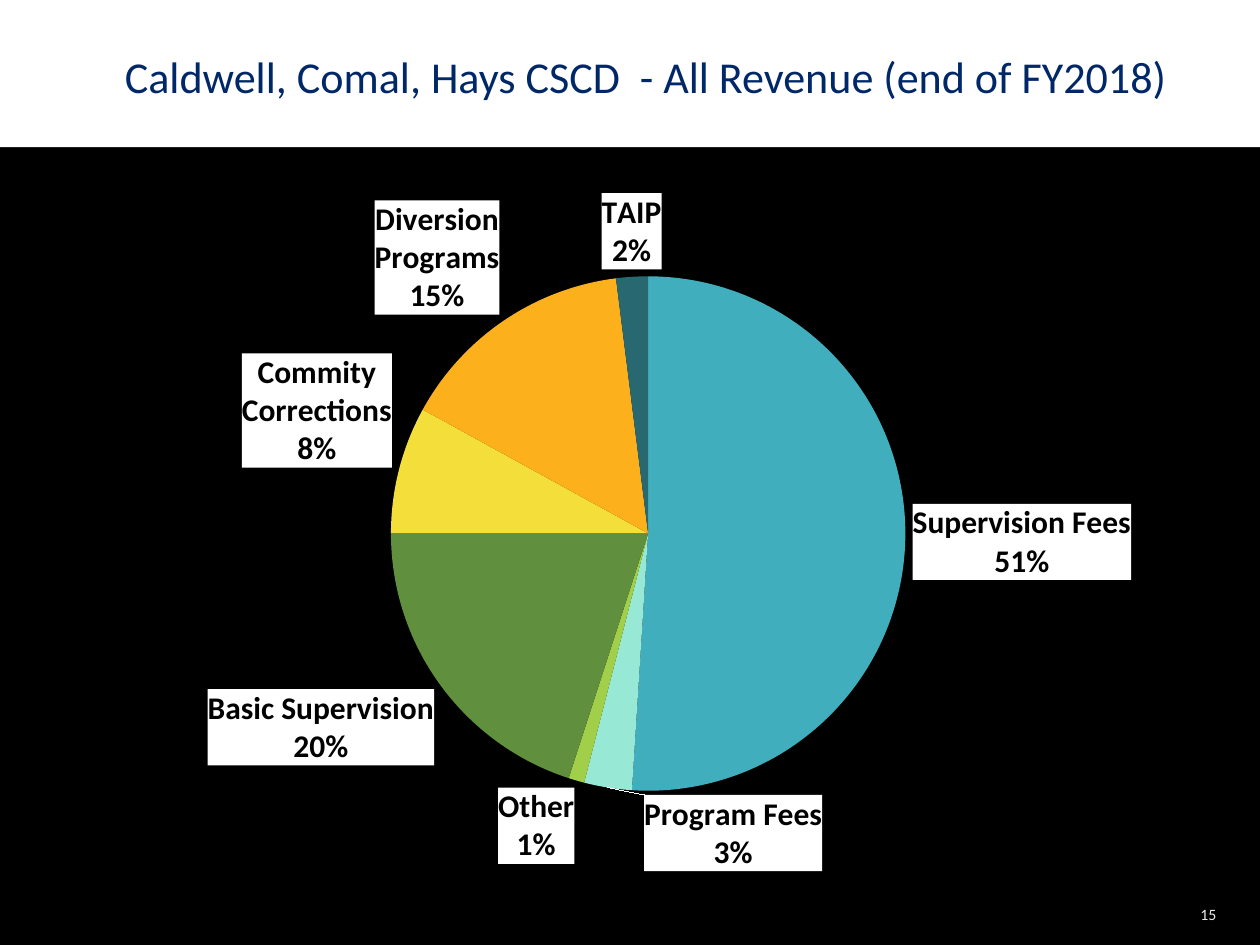
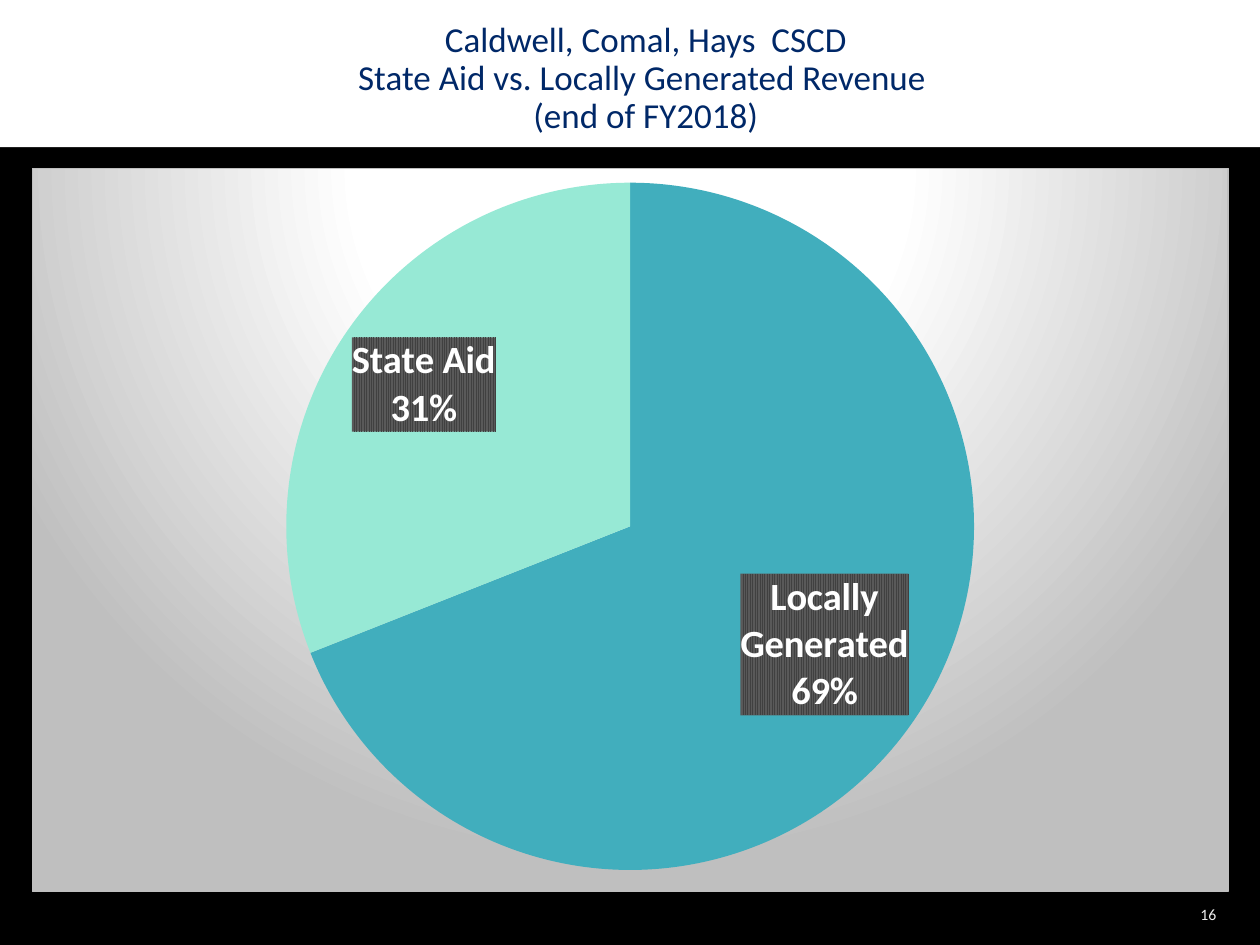
from copy import deepcopy
from dataclasses import dataclass

from pptx import Presentation
from pptx import oxml
from pptx.chart.data import CategoryChartData
from pptx.dml.color import RGBColor
from pptx.enum import chart as charts, shapes, text
from pptx.oxml import ns
from pptx.util import Cm, Pt


@dataclass(frozen=True)
class Theme:
    font: str = "Calibri"
    backdrop: str = "000000"
    band: str = "FFFFFF"
    title: str = "002868"
    light: str = "FFFFFF"
    dark: str = "000000"
    slices: tuple = ("41AEBD", "97E9D5", "A2CF49", "608F3D",
                     "F4DE3A", "FCB11C", "276871")
    number_size: float = 9
    chart_size: float = 10


def rgb(code):
    return RGBColor.from_string(code)


def xml(markup):
    """Turn markup that uses the a: and c: prefixes into an element."""
    head, tail = markup.split(">", 1)
    slash = "/" if head.endswith("/") else ""
    return oxml.parse_xml(f"{head.rstrip('/')} {ns.nsdecls('a', 'c')}{slash}>{tail}")


def gradient(stops, direction):
    marks = "".join(f'<a:gs pos="{place * 1000}"><a:srgbClr val="{code}"/></a:gs>'
                    for place, code in stops)
    return f'<a:gradFill rotWithShape="1"><a:gsLst>{marks}</a:gsLst>{direction}</a:gradFill>'


def solid(code):
    return f'<a:solidFill><a:srgbClr val="{code}"/></a:solidFill>'


def manual_layout(**places):
    parts = "".join(f'<c:{name} val="{value}"/>' for name, value in places.items())
    return xml(f"<c:layout><c:manualLayout>{parts}</c:manualLayout></c:layout>")


def write(box, words, size, align, color=None, fill=None, spacing=None):
    """Fill a box with one paragraph, coloured plainly or by fill markup."""
    frame = box.text_frame
    frame.word_wrap = True
    frame.vertical_anchor = text.MSO_ANCHOR.MIDDLE
    para = frame.paragraphs[0]
    para.text = words
    para.alignment = align
    para.line_spacing = spacing
    for span in para.runs:
        span.font.name = THEME.font
        span.font.size = Pt(size)
        if color:
            span.font.color.rgb = rgb(color)
        if fill:
            span._r.get_or_add_rPr().insert(0, xml(fill))


THEME = Theme()
NUMBER_FILL = gradient([(0, "9E9E9E"), (28, "EDEDED"), (100, "FFFFFF")],
                       '<a:lin ang="5400000" scaled="0"/>')
SPOTLIGHT = gradient(
    [(0, "FFFFFF"), (39, "FFFFFF"), (100, "BFBFBF")],
    '<a:path path="circle"><a:fillToRect l="50000" t="-80000" r="50000" b="180000"/></a:path>')
DARK_STRIPES = ('<a:pattFill prst="narVert"><a:fgClr><a:srgbClr val="404040"/></a:fgClr>'
                '<a:bgClr><a:srgbClr val="595959"/></a:bgClr></a:pattFill>')


class RevenueDeck:
    def __init__(self, first_number):
        self.deck = Presentation()
        self.deck.slide_width = Cm(25.4)
        self.deck.slide_height = Cm(19.05)
        self.number = first_number - 1
        self.page = None

    def add_page(self, title, title_size):
        self.page = self.deck.slides.add_slide(self.deck.slide_layouts[6])
        self.number += 1
        backdrop = self.page.background.fill
        backdrop.solid()
        backdrop.fore_color.rgb = rgb(THEME.backdrop)
        self.add_band()
        self.add_text(title, Cm(1.27), Cm(0.43), Cm(23.5), Cm(2.34), size=title_size,
                      align=text.PP_ALIGN.CENTER, color=THEME.title, spacing=0.9)
        self.add_text(str(self.number), Cm(18.85), Cm(17.98), Cm(5.92), Cm(0.89),
                      size=THEME.number_size, align=text.PP_ALIGN.RIGHT, fill=NUMBER_FILL)

    def add_band(self):
        band = self.page.shapes.add_shape(shapes.MSO_SHAPE.RECTANGLE, 0, 0,
                                          self.deck.slide_width, Cm(2.97))
        band.shadow.inherit = False
        band.fill.solid()
        band.fill.fore_color.rgb = rgb(THEME.band)
        band.line.fill.background()

    def add_text(self, words, left, top, width, height, **style):
        write(self.page.shapes.add_textbox(left, top, width, height), words, **style)

    def add_pie(self, shares, plot_area, **label_style):
        data = CategoryChartData()
        data.categories = list(shares)
        data.add_series("Series 1", list(shares.values()))
        chart = self.page.shapes.add_chart(charts.XL_CHART_TYPE.PIE, Cm(0.64), Cm(3.38),
                                           Cm(24.13), Cm(14.61), data).chart
        chart.has_title = False
        chart.has_legend = False
        chart.font.name = THEME.font
        chart.font.size = Pt(THEME.chart_size)
        chart.font.color.rgb = rgb(THEME.light)
        plot = chart.plots[0]
        plot.vary_by_categories = True
        series = plot.series[0]
        for index, color in enumerate(THEME.slices[:len(shares)]):
            piece = series.points[index].format
            piece.fill.solid()
            piece.fill.fore_color.rgb = rgb(color)
            piece.line.fill.background()
        area = chart._chartSpace.chart.plotArea
        for layout in area.findall(ns.qn("c:layout")):
            area.remove(layout)
        x, y, w, h = plot_area
        area.insert(0, manual_layout(layoutTarget="inner", xMode="edge", yMode="edge",
                                     x=x, y=y, w=w, h=h))
        self.label_slices(series, **label_style)
        return chart

    def label_slices(self, series, size, color, fill, position, shifts=None):
        """Label each slice; shifts maps a slice index to a sideways move."""
        labels = series.data_labels
        labels.show_value = False
        labels.show_category_name = True
        labels.show_percentage = True
        labels.number_format = "0%"
        labels.number_format_is_linked = False
        labels.position = position
        labels.font.name = THEME.font
        labels.font.size = Pt(size)
        labels.font.bold = True
        labels.font.color.rgb = rgb(color)
        element = labels._element
        element.find(ns.qn("c:txPr")).addprevious(xml(f"<c:spPr>{fill}</c:spPr>"))
        element.find(ns.qn("c:showBubbleSize")).addnext(
            xml("<c:separator>\n</c:separator>"))
        leader = element.find(ns.qn("c:showLeaderLines"))
        shared = [child for child in element if child is not leader]
        for index, shift in (shifts or {}).items():
            label = xml(f'<c:dLbl><c:idx val="{index}"/></c:dLbl>')
            label.append(manual_layout(x=shift, y=0))
            label.extend(deepcopy(child) for child in shared)
            element.insert(0, label)
        if leader is not None:
            leader.set("val", "1")
            leader.addnext(xml(f"<c:leaderLines><c:spPr><a:ln>{solid(THEME.light)}"
                               "</a:ln></c:spPr></c:leaderLines>"))

    def add_chart_panel(self, chart, fill, border):
        chart._chartSpace.chart.addnext(
            xml(f'<c:spPr>{fill}<a:ln w="9525">{solid(border)}</a:ln></c:spPr>'))


def main():
    revenue = RevenueDeck(first_number=15)

    revenue.add_page("Caldwell, Comal, Hays CSCD  - All Revenue (end of FY2018)", 25.2)
    revenue.add_pie(
        {"Supervision Fees": 51, "Program Fees": 3, "Other": 1, "Basic Supervision": 20,
         "Commity Corrections": 8, "Diversion Programs": 15, "TAIP": 2},
        plot_area=(0.3, 0.15, 0.43, 0.71), size=18, color=THEME.dark,
        fill=solid(THEME.light), position=charts.XL_LABEL_POSITION.OUTSIDE_END,
        shifts={1: 0.18})

    revenue.add_page("Caldwell, Comal, Hays  CSCD\n"
                     "State Aid vs. Locally Generated Revenue \n(end of FY2018)", 20)
    pie = revenue.add_pie(
        {"Locally Generated": 69, "State Aid": 31},
        plot_area=(0.21, 0.02, 0.58, 0.95), size=22, color=THEME.light,
        fill=DARK_STRIPES, position=charts.XL_LABEL_POSITION.INSIDE_END)
    revenue.add_chart_panel(pie, SPOTLIGHT, border="BFBFBF")

    revenue.deck.save("out.pptx")


if __name__ == "__main__":
    main()
